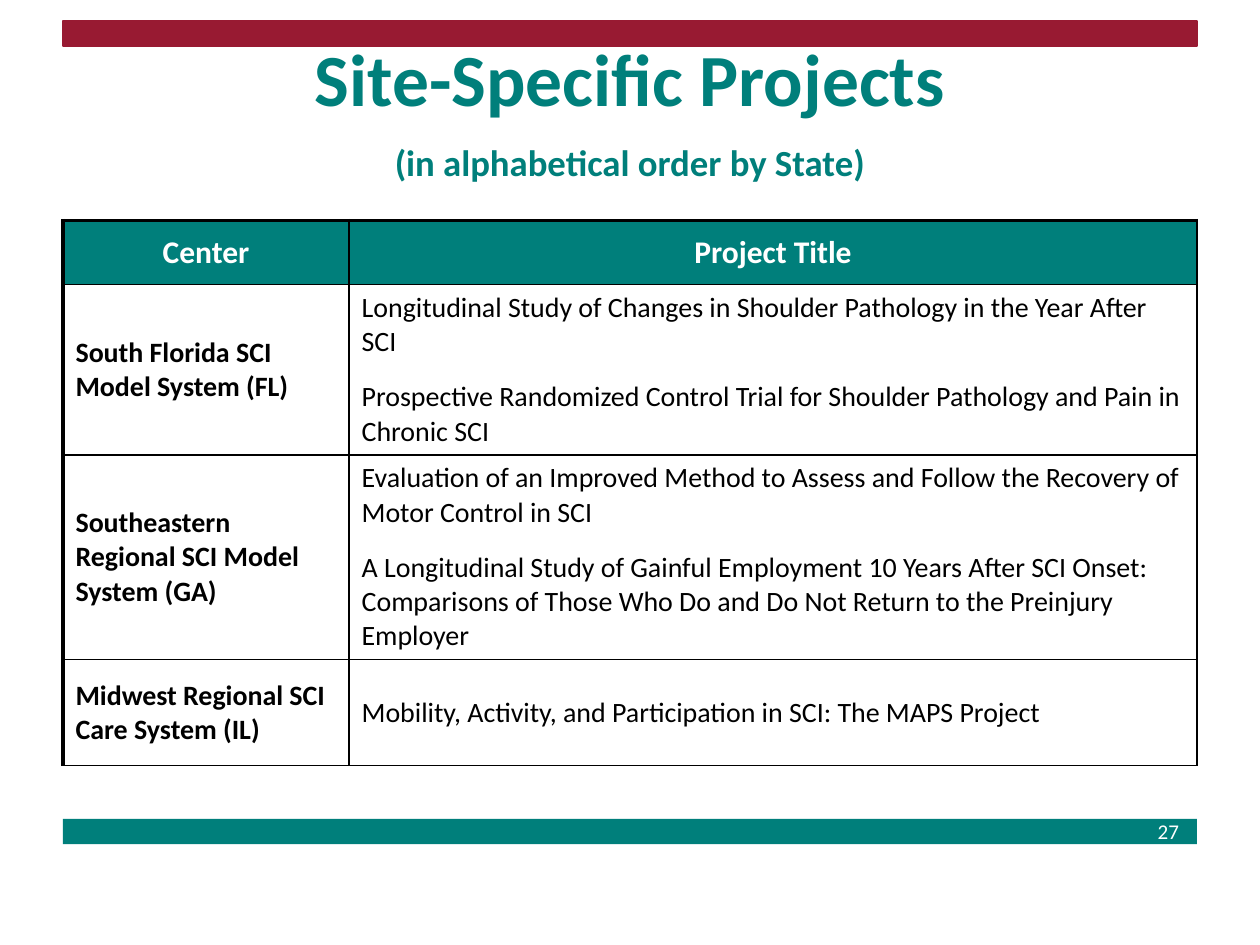
import pptx
import pptx.dml.color
import pptx.enum.shapes
import pptx.enum.text
import pptx.oxml
import pptx.oxml.ns
import pptx.util

Pt = pptx.util.Pt
Align = pptx.enum.text.PP_ALIGN
Anchor = pptx.enum.text.MSO_ANCHOR

TEAL, RED, WHITE, BLACK = "007F7B", "981A32", "FFFFFF", "000000"
LEFT, WIDTH = 36, 648

ROWS = [
    ("South Florida SCI Model System (FL)", [
        "Longitudinal Study of Changes in Shoulder Pathology in the Year After SCI",
        "Prospective Randomized Control Trial for Shoulder Pathology and Pain in Chronic SCI",
    ]),
    ("Southeastern Regional SCI Model System (GA)", [
        "Evaluation of an Improved Method to Assess and Follow the Recovery of Motor Control in SCI",
        "A Longitudinal Study of Gainful Employment 10 Years After SCI Onset: Comparisons of "
        "Those Who Do and Do Not Return to the Preinjury Employer",
    ]),
    ("Midwest Regional SCI Care System (IL)", [
        "Mobility, Activity, and Participation in SCI: The MAPS Project",
    ]),
]


def color(code):
    return pptx.dml.color.RGBColor.from_string(code)


class Deck:
    face = "Calibri"

    def __init__(self, width, height):
        self.show = pptx.Presentation()
        self.show.slide_width, self.show.slide_height = Pt(width), Pt(height)
        self.slide = self.show.slides.add_slide(self.show.slide_layouts[6])

    def style(self, font, size, code, bold=False):
        font.name, font.size, font.bold = self.face, Pt(size), bold
        font.color.rgb = color(code)

    def bar(self, top, height, code, line=None):
        kind = pptx.enum.shapes.MSO_SHAPE.RECTANGLE
        bar = self.slide.shapes.add_shape(kind, Pt(LEFT), Pt(top), Pt(WIDTH), Pt(height))
        bar.shadow.inherit = False
        bar.fill.solid()
        bar.fill.fore_color.rgb = color(code)
        if line:
            bar.line.color.rgb = color(code)
            bar.line.width = Pt(line)
        else:
            bar.line.fill.background()

    def box(self, left, top, width, height):
        box = self.slide.shapes.add_textbox(Pt(left), Pt(top), Pt(width), Pt(height))
        box.text_frame.word_wrap = True
        return box.text_frame

    def title(self, main, sub):
        frame = self.box(LEFT, 26.5, WIDTH, 85)
        frame.vertical_anchor = Anchor.MIDDLE
        para = frame.paragraphs[0]
        para.alignment, para.line_spacing = Align.CENTER, Pt(36)
        for text, size in ((main + "\v", 42), (sub, 21)):
            if text.endswith("\v"):
                run = para.add_run()
                run.text = text[:-1]
                para.add_line_break()
            else:
                run = para.add_run()
                run.text = text
            self.style(run.font, size, TEAL, True)

    def number(self, text):
        para = self.box(654.5, 464.4, 30, 21.6).paragraphs[0]
        para.text = text
        self.style(para.font, 12, WHITE)

    def edge(self, cell, **widths):
        """Draw black borders; keys are L, R, T and B, widths in points."""
        props = cell._tc.get_or_add_tcPr()
        for side in "LRTB":
            props.append(pptx.oxml.parse_xml(
                f'<a:ln{side} {pptx.oxml.ns.nsdecls("a")} w="{Pt(widths.get(side, 1))}">'
                f'<a:solidFill><a:srgbClr val="{BLACK}"/></a:solidFill></a:ln{side}>'))

    def cell(self, cell, texts, first, head):
        cell.vertical_anchor = Anchor.MIDDLE
        self.edge(cell, L=2.25 if first else 1, T=2.25 if head else 1)
        if head:
            cell.fill.solid()
            cell.fill.fore_color.rgb = color(TEAL)
        else:
            cell.fill.background()
        frame = cell.text_frame
        frame.text = "\n".join(texts)
        for i, para in enumerate(frame.paragraphs):
            if head:
                para.alignment = Align.CENTER
                self.style(para.font, 18, WHITE, True)
            else:
                para.space_before, para.space_after = Pt(6 if i else 0), Pt(6)
                self.style(para.font, 16, BLACK, first)

    def table(self, top, heads, rows, widths, heights):
        data = [heads] + rows
        frame = self.slide.shapes.add_table(
            len(data), len(widths), Pt(LEFT), Pt(top), Pt(WIDTH), Pt(sum(heights)))
        grid = frame.table
        for col, width in zip(grid.columns, widths):
            col.width = Pt(width)
        for r, (row, height) in enumerate(zip(data, heights)):
            grid.rows[r].height = Pt(height)
            for c, texts in enumerate(row):
                texts = [texts] if isinstance(texts, str) else texts
                self.cell(grid.cell(r, c), texts, c == 0, r == 0)


def main():
    deck = Deck(720, 540)
    deck.bar(468, 14.4, TEAL)
    deck.number("27")
    deck.bar(12, 14.4, RED, 1.5)
    deck.title("Site-Specific Projects", "(in alphabetical order by State)")
    deck.table(126, ("Center", "Project Title"), ROWS,
               (163.5, 484.5), (36.5, 97.5, 117, 60.5))
    deck.show.save("out.pptx")


if __name__ == "__main__":
    main()
